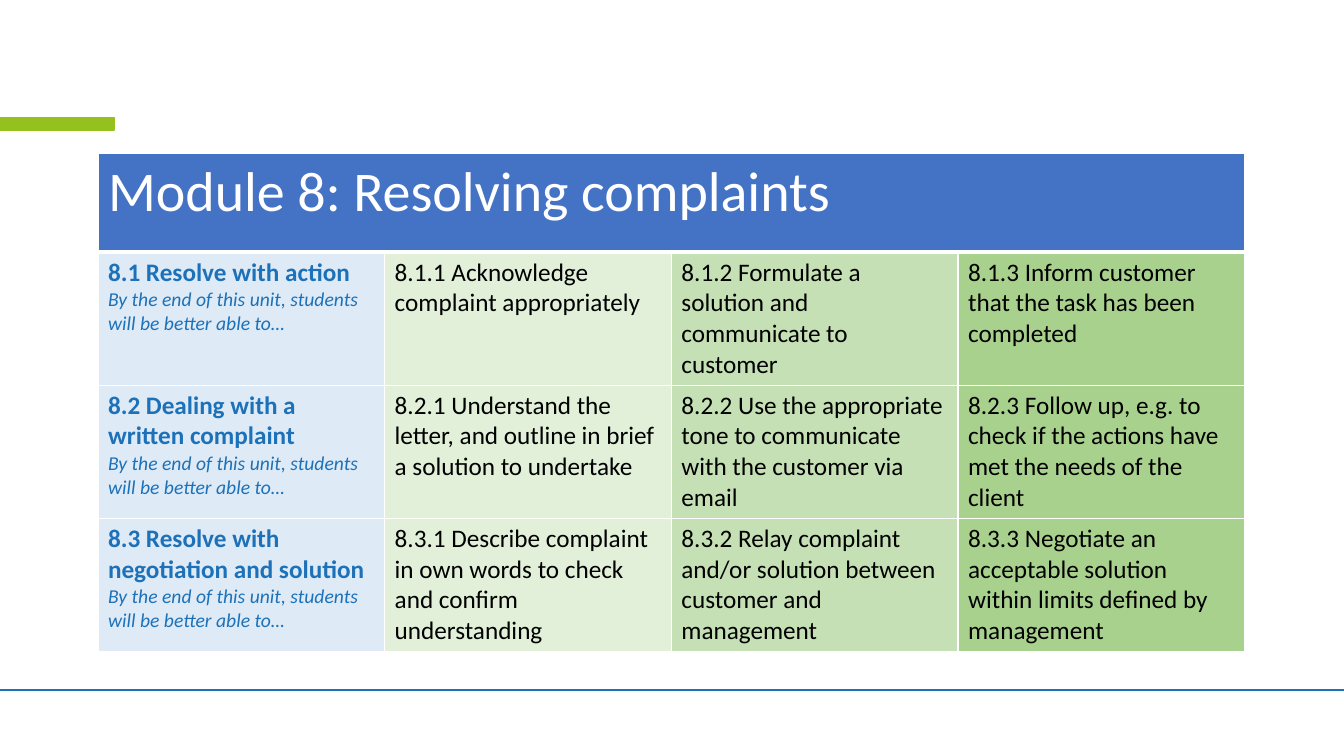
import pptx
import pptx.dml.color
import pptx.enum.shapes
import pptx.oxml
import pptx.oxml.ns
import pptx.util
from lxml import etree

Pt = pptx.util.Pt
qn = pptx.oxml.ns.qn

WHITE, BLACK, BLUE, GREEN = "FFFFFF", "000000", "1D71B8", "95C11F"
HEAD = "4472C4"
FILLS = ["DEEBF7", "E2F0D9", "C5E0B4", "A9D18E"]
TITLE = "Module 8: Resolving complaints"
LEAD = "By the end of this unit, students will be better able to…"
UNITS = [
    ["8.1 Resolve with action",
     "8.1.1 Acknowledge complaint appropriately",
     "8.1.2 Formulate a solution and communicate to customer",
     "8.1.3 Inform customer that the task has been completed"],
    ["8.2 Dealing with a written complaint",
     "8.2.1 Understand the letter, and outline in brief a solution to undertake",
     "8.2.2 Use the appropriate tone to communicate with the customer via email",
     "8.2.3 Follow up, e.g. to check if the actions have met the needs of the client"],
    ["8.3 Resolve with negotiation and solution",
     "8.3.1 Describe complaint in own words to check and confirm understanding",
     "8.3.2 Relay complaint and/or solution between customer and management",
     "8.3.3 Negotiate an acceptable solution within limits defined by management"],
]


def color(code):
    return pptx.dml.color.RGBColor.from_string(code)


class Deck:
    font = "Calibri"

    def __init__(self, slide):
        self.slide = slide

    def line(self, x1, y1, x2, y2, code):
        kind = pptx.enum.shapes.MSO_CONNECTOR.STRAIGHT
        line = self.slide.shapes.add_connector(kind, Pt(x1), Pt(y1), Pt(x2), Pt(y2))
        line.line.color.rgb = color(code)
        line.line.width = Pt(1)
        etree.SubElement(line._element.spPr, qn("a:effectLst"))

    def bar(self, x, y, w, h, code):
        kind = pptx.enum.shapes.MSO_SHAPE.RECTANGLE
        bar = self.slide.shapes.add_shape(kind, Pt(x), Pt(y), Pt(w), Pt(h))
        bar.shadow.inherit = False
        bar.fill.solid()
        bar.fill.fore_color.rgb = color(code)
        bar.line.color.rgb = color(code)
        bar.line.width = Pt(1)

    def table(self, x, y, w, h, rows, cols):
        """Add a table with the given row heights and column widths."""
        frame = self.slide.shapes.add_table(
            len(rows), len(cols), Pt(x), Pt(y), Pt(w), Pt(h))
        for row, size in zip(frame.table.rows, rows):
            row.height = Pt(size)
        for col, size in zip(frame.table.columns, cols):
            col.width = Pt(size)
        frame.height = Pt(h)
        return frame.table

    def cell(self, cell, fill, top=1, base=1):
        """Give a cell its white borders and its fill."""
        props = cell._tc.get_or_add_tcPr()
        for side, width in zip("LRTB", (1, 1, top, base)):
            edge = etree.SubElement(props, qn("a:ln" + side), w=str(Pt(width)))
            solid = etree.SubElement(edge, qn("a:solidFill"))
            etree.SubElement(solid, qn("a:srgbClr"), val=WHITE)
        cell.fill.solid()
        cell.fill.fore_color.rgb = color(fill)

    def text(self, para, words, size, code, bold=False, slant=False):
        run = para.add_run()
        run.text = words
        font = run.font
        font.name, font.size = self.font, Pt(size)
        font.bold, font.italic = bold, slant
        font.color.rgb = color(code)


def main():
    prs = pptx.Presentation()
    prs.slide_width, prs.slide_height = Pt(960), Pt(540)
    deck = Deck(prs.slides.add_slide(prs.slide_layouts[6]))

    deck.line(0, 493, 960, 493, BLUE)
    deck.bar(0, 84, 81.5, 9, GREEN)

    table = deck.table(70, 109.5, 819.2, 351.4, [70.5] + [83.5] * 3, [204.8] * 4)
    for col in range(4):
        deck.cell(table.cell(0, col), HEAD, base=3)
    title = table.cell(0, 0)
    title.merge(table.cell(0, 3))
    deck.text(title.text_frame.paragraphs[0], TITLE, 40, WHITE)

    for row, unit in enumerate(UNITS, 1):
        for col, words in enumerate(unit):
            cell = table.cell(row, col)
            deck.cell(cell, FILLS[col], top=3 if row == 1 else 1)
            frame = cell.text_frame
            first = col == 0
            deck.text(frame.paragraphs[0], words, 18, BLUE if first else BLACK, bold=first)
            if first:
                deck.text(frame.add_paragraph(), LEAD, 14, BLUE, slant=True)

    prs.save("out.pptx")


if __name__ == "__main__":
    main()
